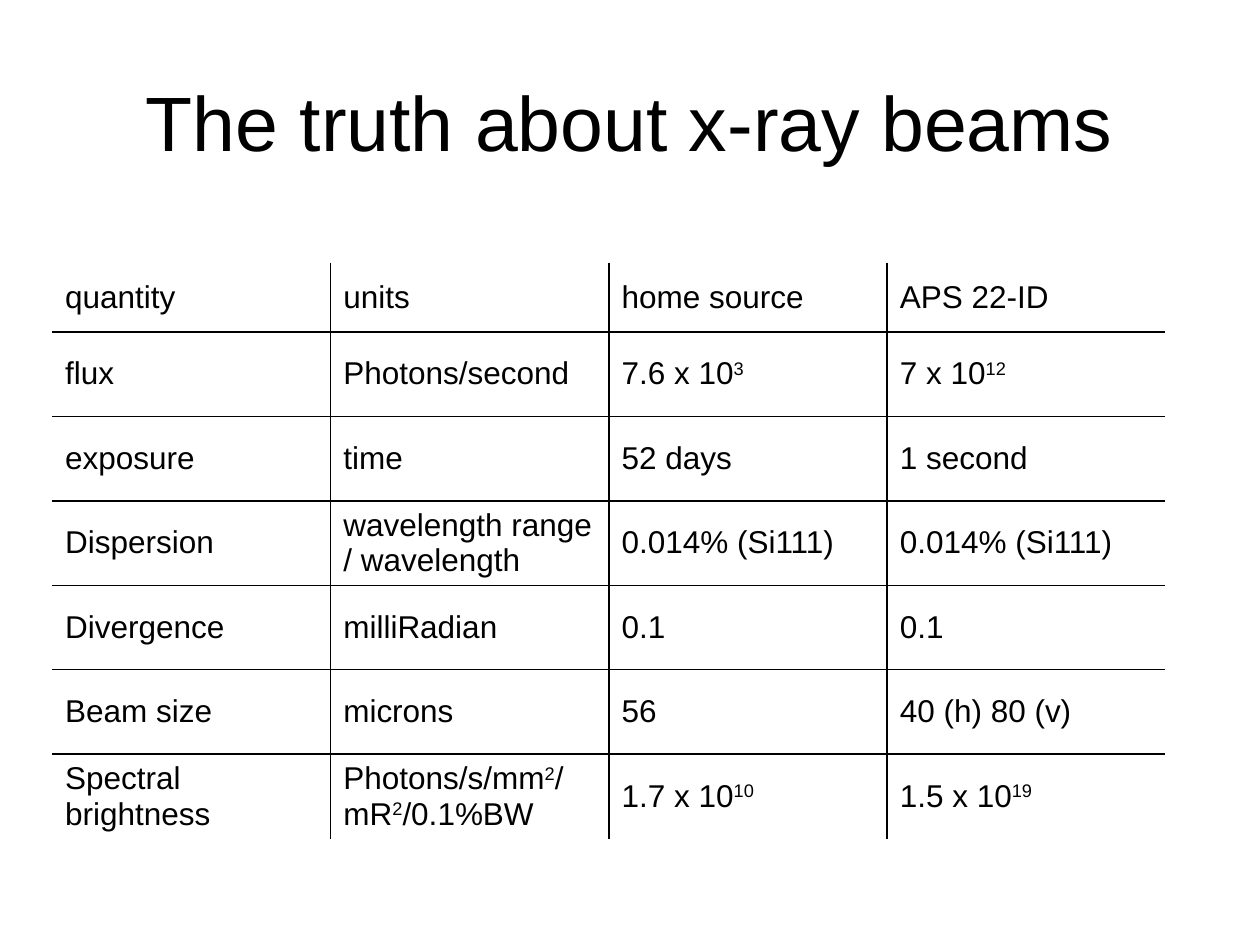
"""Build the slide comparing a home x-ray source with a synchrotron beamline."""
import pptx
import pptx.dml.color
import pptx.enum.text
import pptx.oxml.ns
import pptx.util
import lxml.etree

COLORS = {"ink": "000000", "paper": "FFFFFF"}

BEAM_ROWS = [
    ["quantity", "units", "home source", "APS 22-ID"],
    ["flux", "Photons/second", "7.6 x 10^3", "7 x 10^12"],
    ["exposure", "time", "52 days", "1 second"],
    ["Dispersion", "wavelength range / wavelength", "0.014% (Si111)", "0.014% (Si111)"],
    ["Divergence", "milliRadian", "0.1", "0.1"],
    ["Beam size", "microns", "56", "40 (h) 80 (v)"],
    ["Spectral\nbrightness", "Photons/s/mm^2^/\nmR^2^/0.1%BW", "1.7 x 10^10", "1.5 x 10^19"],
]


class SlideBuilder:
    """Hold the style and the current slide."""

    def __init__(self, slide, font="Arial"):
        self.slide = slide
        self.font = font

    def color(self, name):
        """Return the named colour."""
        return pptx.dml.color.RGBColor.from_string(COLORS[name])

    def add_runs(self, paragraph, marked_text, size):
        """Add runs to a paragraph, raising every second part between carets."""
        for position, part in enumerate(marked_text.split("^")):
            if not part:
                continue
            run = paragraph.add_run()
            run.text = part
            run.font.name = self.font
            run.font.size = pptx.util.Pt(size)
            run.font.color.rgb = self.color("ink")
            if position % 2:
                run._r.get_or_add_rPr().set("baseline", "30000")

    def title(self, wording, left, top, width, height, size):
        """Place and fill the title placeholder."""
        title = self.slide.shapes.title
        title.left, title.top = pptx.util.Pt(left), pptx.util.Pt(top)
        title.width, title.height = pptx.util.Pt(width), pptx.util.Pt(height)
        title.text_frame.vertical_anchor = pptx.enum.text.MSO_ANCHOR.MIDDLE
        heading = title.text_frame.paragraphs[0]
        heading.alignment = pptx.enum.text.PP_ALIGN.CENTER
        self.add_runs(heading, wording, size)

    def borders(self, cell, sides):
        """Draw one-point borders on the sides that are on, and none elsewhere."""
        properties = cell._tc.get_or_add_tcPr()
        qn = pptx.oxml.ns.qn
        for order, (side, drawn) in enumerate(sides.items()):
            line = lxml.etree.Element(qn(f"a:ln{side}"), w=str(pptx.util.Pt(1)))
            if drawn:
                fill = lxml.etree.SubElement(line, qn("a:solidFill"))
                lxml.etree.SubElement(fill, qn("a:srgbClr"), val=COLORS["ink"])
            else:
                lxml.etree.SubElement(line, qn("a:noFill"))
            properties.insert(order, line)

    def cell(self, cell, marked_text, size):
        """Fill a cell with one paragraph per line of text."""
        cell.fill.solid()
        cell.fill.fore_color.rgb = self.color("paper")
        cell.vertical_anchor = pptx.enum.text.MSO_ANCHOR.MIDDLE
        cell.margin_top = cell.margin_bottom = pptx.util.Pt(3)
        for number, line in enumerate(marked_text.split("\n")):
            frame = cell.text_frame
            paragraph = frame.add_paragraph() if number else frame.paragraphs[0]
            self.add_runs(paragraph, line, size)

    def table(self, rows, left, top, column_width, row_heights, size):
        """Add a table with inner grid lines only."""
        last_row, last_column = len(rows) - 1, len(rows[0]) - 1
        table = self.slide.shapes.add_table(
            len(rows), len(rows[0]), pptx.util.Pt(left), pptx.util.Pt(top),
            pptx.util.Pt(column_width * len(rows[0])), pptx.util.Pt(sum(row_heights)),
        ).table
        table.first_row = table.horz_banding = False
        for column in table.columns:
            column.width = pptx.util.Pt(column_width)
        for r, row in enumerate(rows):
            table.rows[r].height = pptx.util.Pt(row_heights[r])
            for c, marked_text in enumerate(row):
                self.cell(table.cell(r, c), marked_text, size)
                self.borders(table.cell(r, c), {
                    "L": c > 0, "R": c < last_column, "T": r > 0, "B": r < last_row})


def main():
    """Create and save the presentation."""
    deck = pptx.Presentation()
    deck.slide_width, deck.slide_height = pptx.util.Pt(720), pptx.util.Pt(540)
    builder = SlideBuilder(deck.slides.add_slide(deck.slide_layouts[5]))
    builder.title("The truth about x-ray beams", 0, 0, 720, 138, 44)
    builder.table(BEAM_ROWS, 30, 150, 159, [39.6] + [48.3] * 6, 18)
    deck.save("out.pptx")


if __name__ == "__main__":
    main()
